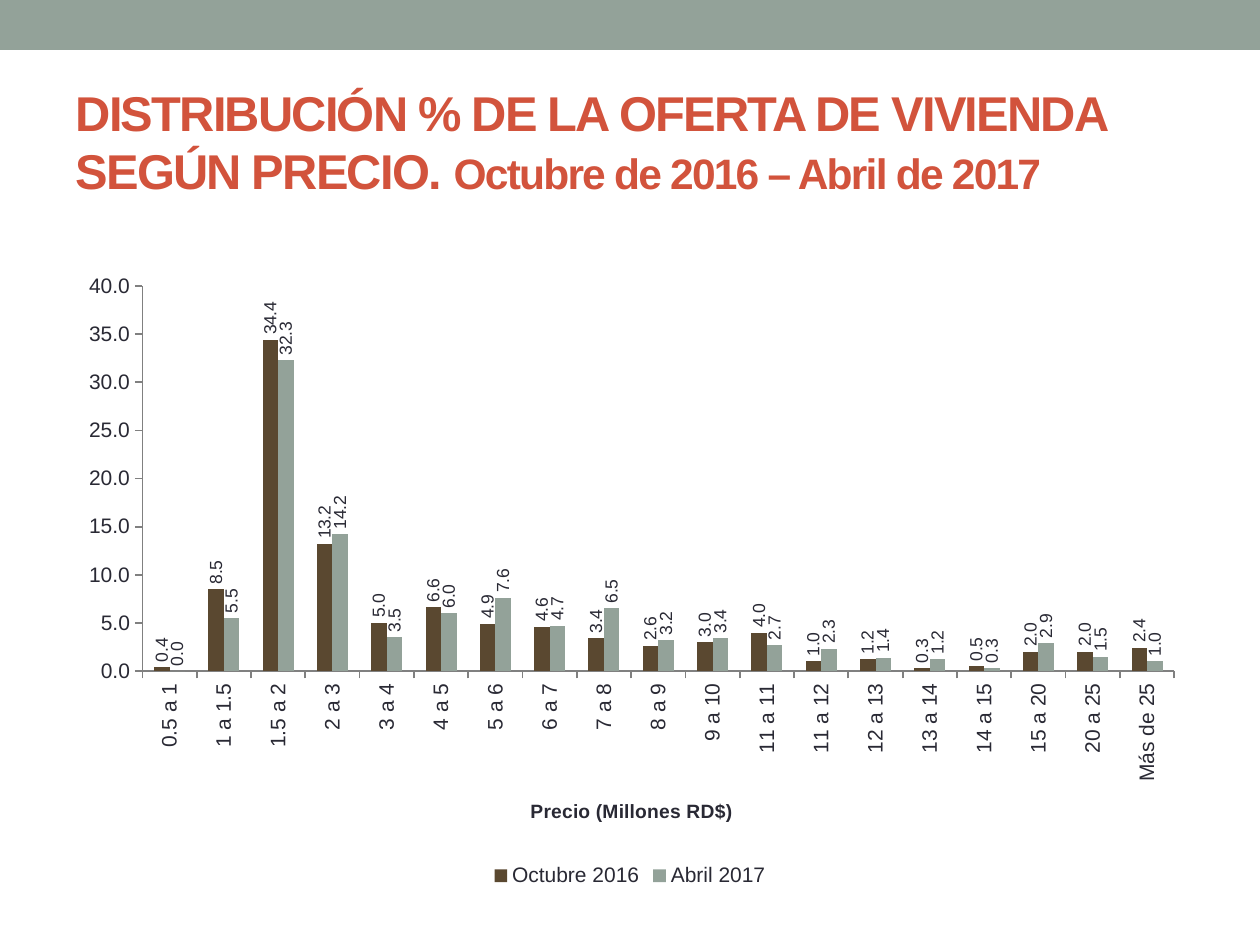
from dataclasses import dataclass

from lxml import etree
from pptx import Presentation
from pptx import util as u
from pptx.chart.data import CategoryChartData
from pptx.dml.color import RGBColor
from pptx.enum import chart as c, shapes, text
from pptx.oxml import parse_xml
from pptx.oxml.ns import nsdecls, qn

PX = 914400 / 126


@dataclass(frozen=True)
class Theme:
    font: str = "Arial"
    sage: RGBColor = RGBColor(0x93, 0xA2, 0x99)
    brown: RGBColor = RGBColor(0x5A, 0x48, 0x30)
    red: RGBColor = RGBColor(0xD2, 0x53, 0x3C)
    ink: RGBColor = RGBColor(0x29, 0x29, 0x34)
    axis: RGBColor = RGBColor(0x80, 0x80, 0x80)
    title: float = 27.9
    subtitle: float = 24.3
    body: int = 12
    axis_title: int = 11
    label: int = 10


THEME = Theme()
PRICES = [
    ("0.5 a 1", 0.4, 0), ("1 a 1.5", 8.5, 5.5), ("1.5 a 2", 34.4, 32.3),
    ("2 a 3", 13.2, 14.2), ("3 a 4", 5, 3.5), ("4 a 5", 6.6, 6),
    ("5 a 6", 4.9, 7.6), ("6 a 7", 4.6, 4.7), ("7 a 8", 3.4, 6.5),
    ("8 a 9", 2.6, 3.2), ("9 a 10", 3, 3.4), ("11 a 11", 4, 2.7),
    ("11 a 12", 1, 2.3), ("12 a 13", 1.2, 1.4), ("13 a 14", 0.3, 1.2),
    ("14 a 15", 0.5, 0.3), ("15 a 20", 2, 2.9), ("20 a 25", 2, 1.5),
    ("Más de 25", 2.4, 1),
]


def box(*lengths):
    return [u.Emu(round(length * PX)) for length in lengths]


def style_font(font, size, color, bold=False):
    font.name = THEME.font
    font.size = u.Pt(size)
    font.bold = bold
    font.color.rgb = color


def add_band(slide):
    band = slide.shapes.add_shape(shapes.MSO_SHAPE.RECTANGLE, *box(0, 0, 1260, 50))
    band.shadow.inherit = False
    band.fill.solid()
    band.fill.fore_color.rgb = THEME.sage
    band.line.fill.background()


def fill_title(slide, parts):
    title = slide.shapes.title
    title.left, title.top, title.width, title.height = box(63, 73, 1134, 136)
    frame = title.text_frame
    frame.word_wrap = True
    frame.auto_size = text.MSO_AUTO_SIZE.NONE
    frame.vertical_anchor = text.MSO_ANCHOR.MIDDLE
    paragraph = frame.paragraphs[0]
    paragraph.alignment = text.PP_ALIGN.LEFT
    style_font(paragraph.font, THEME.title, THEME.red, True)
    for words, size in parts:
        run = paragraph.add_run()
        run.text = words
        style_font(run.font, size, THEME.red, True)
        run.font._element.set("spc", "-100")


def turn_upright(element):
    body = element.find(qn("c:txPr")).find(qn("a:bodyPr"))
    body.set("rot", "-5400000")
    body.set("vert", "horz")


def style_axis(axis):
    axis.has_major_gridlines = False
    axis.major_tick_mark = c.XL_TICK_MARK.OUTSIDE
    axis.minor_tick_mark = c.XL_TICK_MARK.NONE
    axis.format.line.color.rgb = THEME.axis
    axis.format.line.width = u.Pt(1)
    style_font(axis.tick_labels.font, THEME.body, THEME.ink)


def style_series(series, color):
    series.format.fill.solid()
    series.format.fill.fore_color.rgb = color
    series.invert_if_negative = False
    labels = series.data_labels
    labels.show_value = True
    labels.number_format = "0.0"
    labels.number_format_is_linked = False
    labels.position = c.XL_LABEL_POSITION.OUTSIDE_END
    style_font(labels.font, THEME.label, THEME.ink)
    turn_upright(labels._element)


def place_plot(chart, **fractions):
    area = chart._chartSpace.chart.plotArea
    for old in area.findall(qn("c:layout")):
        area.remove(old)
    layout = parse_xml(f"<c:layout {nsdecls('c')}><c:manualLayout/></c:layout>")
    settings = {"layoutTarget": "inner", "xMode": "edge", "yMode": "edge", **fractions}
    for name, value in settings.items():
        etree.SubElement(layout[0], qn(f"c:{name}")).set("val", str(value))
    area.insert(0, layout)


def add_price_chart(slide):
    categories, october, april = zip(*PRICES)
    data = CategoryChartData(number_format="0.0")
    data.categories = categories
    data.add_series("Octubre 2016", october)
    data.add_series("Abril 2017", april)
    chart = slide.shapes.add_chart(
        c.XL_CHART_TYPE.COLUMN_CLUSTERED, *box(63, 261, 1134, 631), data).chart
    chart.has_title = False
    style_font(chart.font, THEME.body, THEME.ink)
    chart.has_legend = True
    chart.legend.position = c.XL_LEGEND_POSITION.BOTTOM
    chart.legend.include_in_layout = False
    style_font(chart.legend.font, THEME.body, THEME.ink)

    plot = chart.plots[0]
    plot.gap_width = 150
    plot.overlap = 0
    plot.vary_by_categories = False
    for series, color in zip(plot.series, (THEME.brown, THEME.sage)):
        style_series(series, color)

    for axis in (chart.category_axis, chart.value_axis):
        style_axis(axis)
    turn_upright(chart.category_axis._element)
    chart.value_axis.minimum_scale = 0
    chart.value_axis.maximum_scale = 40
    chart.value_axis.major_unit = 5
    chart.value_axis.tick_labels.number_format = "0.0"
    chart.value_axis.tick_labels.number_format_is_linked = False
    paragraph = chart.category_axis.axis_title.text_frame.paragraphs[0]
    paragraph.text = "Precio (Millones RD$)"
    style_font(paragraph.font, THEME.axis_title, THEME.ink, True)
    place_plot(chart, x=0.07, y=0.04, w=0.91, h=0.61)


def main():
    presentation = Presentation()
    presentation.slide_width, presentation.slide_height = box(1260, 945)
    slide = presentation.slides.add_slide(presentation.slide_layouts[5])
    add_band(slide)
    fill_title(slide, [
        ("DISTRIBUCIÓN % DE LA OFERTA DE VIVIENDA SEGÚN PRECIO. ", THEME.title),
        ("Octubre de 2016 – Abril de 2017", THEME.subtitle),
    ])
    add_price_chart(slide)
    presentation.save("out.pptx")


if __name__ == "__main__":
    main()
